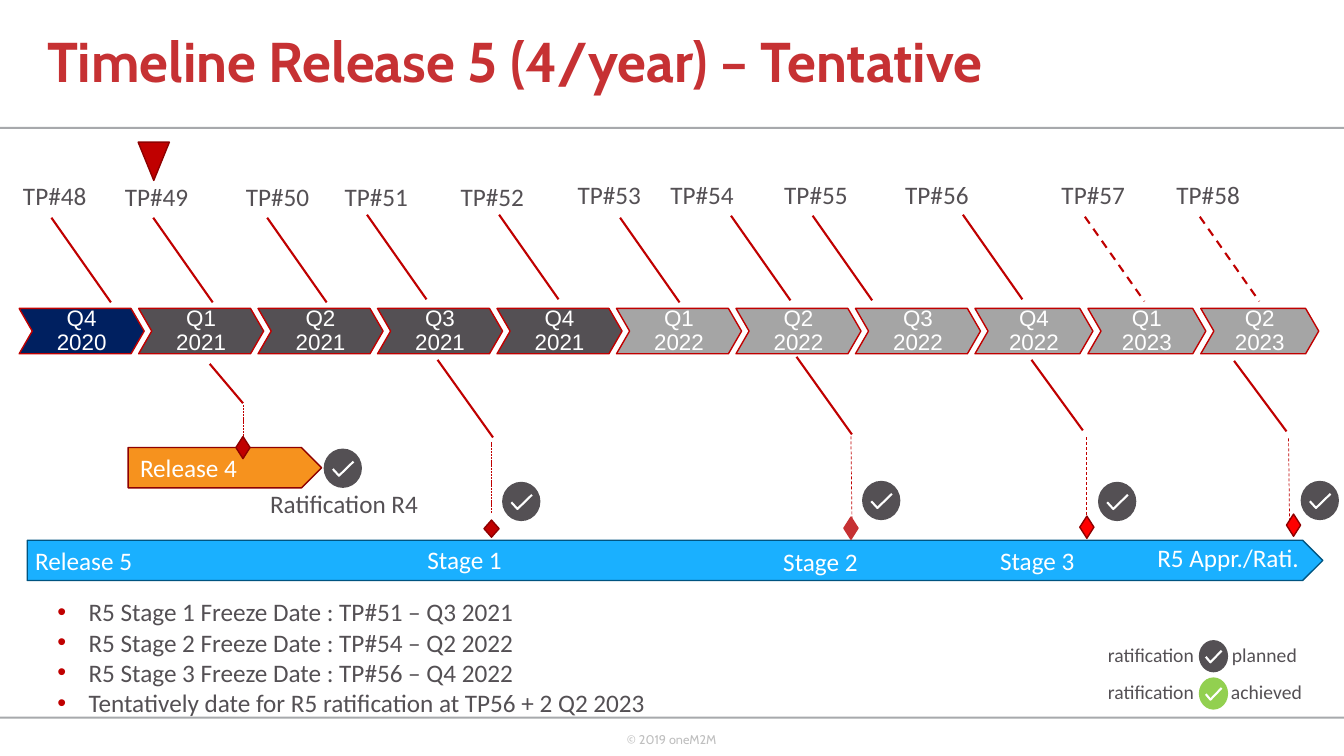
from lxml import etree
from pptx import Presentation
from pptx.dml.color import RGBColor
from pptx.enum.dml import MSO_LINE
from pptx.enum.shapes import MSO_CONNECTOR, MSO_SHAPE
from pptx.enum.text import MSO_ANCHOR, PP_ALIGN
from pptx.oxml.ns import qn
from pptx.util import Inches, Pt

STRAIGHT = MSO_CONNECTOR.STRAIGHT
RECT, OVAL, DIAMOND = MSO_SHAPE.RECTANGLE, MSO_SHAPE.OVAL, MSO_SHAPE.DIAMOND
CHEVRON, PENTAGON = MSO_SHAPE.CHEVRON, MSO_SHAPE.PENTAGON
TRIANGLE = MSO_SHAPE.ISOSCELES_TRIANGLE
DASH, SYS_DASH = MSO_LINE.DASH, MSO_LINE.SQUARE_DOT
MIDDLE, CENTER = MSO_ANCHOR.MIDDLE, PP_ALIGN.CENTER

WHITE = RGBColor(0xFF, 0xFF, 0xFF)
RULE = RGBColor(0xA7, 0xA9, 0xAC)
PALE = RGBColor(0xBF, 0xBF, 0xBF)
TITLE_RED = RGBColor(0xC6, 0x31, 0x33)
RED = RGBColor(0xC0, 0x00, 0x00)
DARK_RED = RGBColor(0x8E, 0x00, 0x00)
BRIGHT_RED = RGBColor(0xFF, 0x00, 0x00)
SLATE = RGBColor(0x54, 0x50, 0x54)
GREY = RGBColor(0xA5, 0xA5, 0xA5)
NAVY = RGBColor(0x00, 0x20, 0x60)
BLUE = RGBColor(0x1A, 0xB0, 0xFF)
DARK_BLUE = RGBColor(0x00, 0x54, 0x80)
ORANGE = RGBColor(0xF6, 0x92, 0x1E)
GREEN = RGBColor(0x92, 0xD0, 0x50)

TITLE = "Timeline Release 5 (4/year) – Tentative"
FOOTER = "© 2019 oneM2M"
BULLETS = [
    "R5 Stage 1 Freeze Date : TP#51 – Q3 2021",
    "R5 Stage 2 Freeze Date : TP#54 – Q2 2022",
    "R5 Stage 3 Freeze Date : TP#56 – Q4 2022",
    "Tentatively date for R5 ratification at TP56 + 2 Q2 2023",
]
QUARTERS = [("Q4 2020", NAVY)]
QUARTERS += [(f"Q{n} 2021", SLATE) for n in range(1, 5)]
QUARTERS += [(f"Q{n} 2022", GREY) for n in range(1, 5)]
QUARTERS += [(f"Q{n} 2023", GREY) for n in (1, 2)]
MEETINGS = [
    ("TP#48", 0.13, 1.74, 0.51, 2.16, None),
    ("TP#49", 1.14, 1.75, 1.52, 2.16, None),
    ("TP#50", 2.34, 1.75, 2.65, 2.16, None),
    ("TP#51", 3.32, 1.75, 3.64, 2.13, None),
    ("TP#52", 4.47, 1.75, 4.95, 2.13, None),
    ("TP#53", 5.63, 1.73, 6.15, 2.16, None),
    ("TP#54", 6.55, 1.73, 7.25, 2.14, None),
    ("TP#55", 7.68, 1.73, 8.06, 2.14, None),
    ("TP#56", 8.88, 1.73, 9.55, 2.13, None),
    ("TP#57", 10.43, 1.73, 10.76, 2.15, DASH),
    ("TP#58", 11.57, 1.73, 11.9, 2.15, DASH),
]
LINKS = [
    (2.08, 3.61, 2.41, 4.0),
    (4.34, 3.57, 4.89, 4.34),
    (7.9, 3.54, 8.45, 4.31),
    (10.23, 3.57, 10.74, 4.27),
    (12.24, 3.58, 12.76, 4.28),
]
DROPS = [
    (2.41, 4.02, 2.41, 4.33, SYS_DASH),
    (4.87, 4.39, 4.87, 5.09, SYS_DASH),
    (8.44, 4.33, 8.45, 5.14, DASH),
    (10.77, 4.34, 10.77, 5.16, DASH),
    (12.78, 4.35, 12.79, 5.17, DASH),
]
MILESTONES = [
    (2.34, 4.33, 0.14, 0.22, RED, DARK_RED),
    (4.8, 5.16, 0.15, 0.17, RED, DARK_RED),
    (8.37, 5.13, 0.14, 0.22, TITLE_RED, TITLE_RED),
    (10.71, 5.12, 0.14, 0.22, BRIGHT_RED, DARK_RED),
    (12.76, 5.1, 0.14, 0.22, BRIGHT_RED, DARK_RED),
]
LABELS = [
    ("Release 4", 1.29, 4.44, 1.18, WHITE),
    ("Ratification R4", 2.58, 4.8, 1.69, SLATE),
    ("Release 5", 0.25, 5.36, 1.37, WHITE),
    ("Stage 1", 4.14, 5.35, 0.94, WHITE),
    ("Stage 2", 7.67, 5.37, 0.94, WHITE),
    ("Stage 3", 9.82, 5.36, 0.94, WHITE),
    ("R5 Appr./Rati.", 11.38, 5.33, 1.62, WHITE),
]
CHECKS = [(3.21, 4.45), (4.98, 4.78), (8.55, 4.77), (10.89, 4.78), (12.9, 4.77)]
LEGEND = [("planned", 12.12, 6.33, 0.85, SLATE), ("achieved", 12.11, 6.7, 0.91, GREEN)]
TICK = [(0.24, 0.52), (0.4, 0.69), (0.78, 0.33)]

prs = Presentation()
prs.slide_width, prs.slide_height = Inches(13.33), Inches(7.5)
s = prs.slides.add_slide(prs.slide_layouts[6])


def write(p, text, size, color, font="Calibri", bold=False):
    r = p.add_run()
    r.text = text
    r.font.name, r.font.size, r.font.bold = font, Pt(size), bold
    r.font.color.rgb = color


def box(x, y, w, h, wrap=False):
    tf = s.shapes.add_textbox(Inches(x), Inches(y), Inches(w), Inches(h)).text_frame
    tf.word_wrap = wrap
    return tf


def label(text, x, y, w, color, size=18, h=0.4, font="Calibri"):
    write(box(x, y, w, h).paragraphs[0], text, size, color, font)


def shape(kind, x, y, w, h, fill, line=None):
    sp = s.shapes.add_shape(kind, Inches(x), Inches(y), Inches(w), Inches(h))
    sp.shadow.inherit = False
    sp.fill.solid()
    sp.fill.fore_color.rgb = fill
    if line is None:
        sp.line.fill.background()
    else:
        sp.line.color.rgb = line
        sp.line.width = Pt(1)
    return sp


def connect(x1, y1, x2, y2, width=1.5, dash=None):
    c = s.shapes.add_connector(STRAIGHT, Inches(x1), Inches(y1), Inches(x2), Inches(y2))
    c.line.color.rgb = RED
    c.line.width = Pt(width)
    if dash is not None:
        c.line.dash_style = dash
    etree.SubElement(c._element.spPr, qn("a:effectLst"))


def check(x, y, w, h, color):
    shape(OVAL, x, y, w, h, color)
    points = [(Inches(x + u * w), Inches(y + v * h)) for u, v in TICK]
    fb = s.shapes.build_freeform(*points[0])
    fb.add_line_segments(points[1:], close=False)
    sp = fb.convert_to_shape()
    sp.shadow.inherit = False
    sp.fill.background()
    sp.line.color.rgb = WHITE
    sp.line.width = Pt(1.5)


for y in (1.26, 7.11):
    shape(RECT, 0, y, 13.33, 0.02, RULE)
label(FOOTER, 6.12, 7.21, 1.09, PALE, 9, font="Cabin")

tf = box(0.37, 0, 10.81, 1.28, wrap=True)
tf.vertical_anchor = MIDDLE
tf.paragraphs[0].line_spacing = 0.9
write(tf.paragraphs[0], TITLE, 40, TITLE_RED, "Cabin", True)

tf = box(0.47, 5.87, 8.77, 1.62, wrap=True)
for i, text in enumerate(BULLETS):
    p = tf.paragraphs[0] if i == 0 else tf.add_paragraph()
    pPr = p._p.get_or_add_pPr()
    pPr.set("marL", str(Inches(0.31)))
    pPr.set("indent", str(-Inches(0.31)))
    color = etree.SubElement(pPr, qn("a:buClr"))
    etree.SubElement(color, qn("a:srgbClr"), val=str(RED))
    etree.SubElement(pPr, qn("a:buFont"), typeface="Arial")
    etree.SubElement(pPr, qn("a:buChar"), char="•")
    write(p, text, 18, SLATE)

shape(TRIANGLE, 1.37, 1.41, 0.31, 0.38, RED, DARK_RED).rotation = 180
shape(PENTAGON, 0.27, 5.36, 12.85, 0.4, BLUE, DARK_BLUE)
shape(PENTAGON, 1.27, 4.44, 1.92, 0.4, ORANGE, DARK_RED)

for i, (text, fill) in enumerate(QUARTERS):
    x, w = (0.19 + 1.185 * i, 1.24) if i < 8 else (9.67 + 1.12 * (i - 8), 1.17)
    sp = shape(CHEVRON, x, 3.06, w, 0.45, fill, RED)
    sp.adjustments[0] = 0.289
    tf = sp.text_frame
    tf.word_wrap = True
    tf.vertical_anchor = MIDDLE
    tf.margin_left = tf.margin_right = tf.margin_top = tf.margin_bottom = Inches(0.08)
    p = tf.paragraphs[0]
    p.alignment, p.line_spacing = CENTER, 0.9
    write(p, text, 16, WHITE, "Arial")

for text, x, y, line_x, line_y, dash in MEETINGS:
    label(text, x, y, 0.84, SLATE)
    connect(line_x, line_y, line_x + 0.59, line_y + 0.84, dash=dash)
for ends in LINKS:
    connect(*ends)
for *ends, dash in DROPS:
    connect(*ends, width=0.5, dash=dash)
for milestone in MILESTONES:
    shape(DIAMOND, *milestone)
for item in LABELS:
    label(*item)
for x, y in CHECKS:
    check(x, y, 0.38, 0.39, SLATE)
for text, x, y, w, color in LEGEND:
    label("ratification", 10.89, y, 1.07, SLATE, 14, 0.34)
    check(11.89, y + 0.02, 0.29, 0.32, color)
    label(text, x, y, w, SLATE, 14, 0.34)

prs.save("out.pptx")
